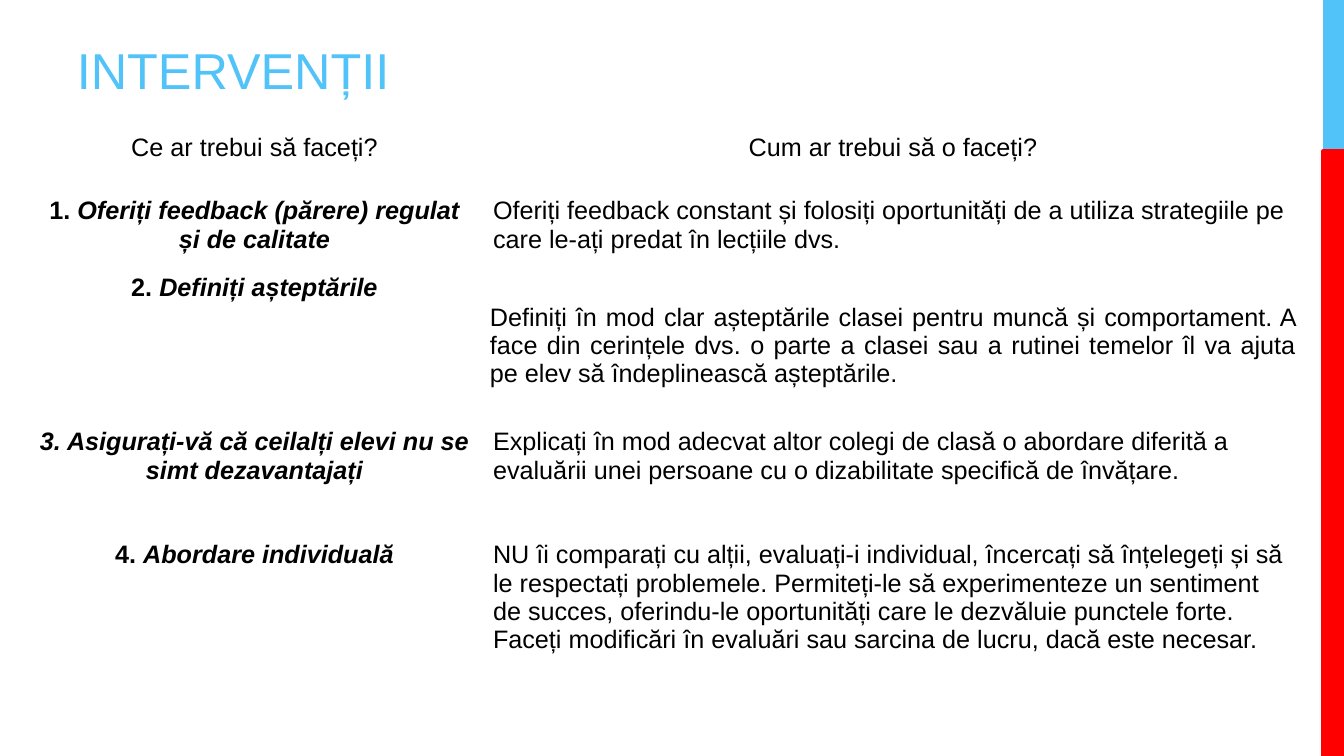
from dataclasses import dataclass

from pptx import Presentation
from pptx.dml.color import RGBColor
from pptx.enum.shapes import MSO_SHAPE as Shape
from pptx.enum.text import MSO_ANCHOR as Anchor, PP_ALIGN as Align
from pptx.util import Pt

PX = 914400 / 100.8

TITLE = "INTERVENȚII"
HEADINGS = ("Ce ar trebui să faceți?", "Cum ar trebui să o faceți?")
# (number, is the number italic, action, how to do it)
INTERVENTIONS = [
    ("1. ", False, "Oferiți feedback (părere) regulat și de calitate",
     "Oferiți feedback constant și folosiți oportunități de a utiliza "
     "strategiile pe care le-ați predat în lecțiile dvs."),
    ("2. ", False, "Definiți așteptările",
     "Definiți în mod clar așteptările clasei pentru muncă și comportament. "
     "A face din cerințele dvs. o parte a clasei sau a rutinei temelor îl va "
     "ajuta pe elev să îndeplinească așteptările."),
    ("3. ", True, "Asigurați-vă că ceilalți elevi nu se simt dezavantajați",
     "Explicați în mod adecvat altor colegi de clasă o abordare diferită a "
     "evaluării unei persoane cu o dizabilitate specifică de învățare."),
    ("4. ", False, "Abordare individuală",
     "NU îi comparați cu alții, evaluați-i individual, încercați să "
     "înțelegeți și să le respectați problemele. Permiteți-le să "
     "experimenteze un sentiment de succes, oferindu-le oportunități care le "
     "dezvăluie punctele forte. Faceți modificări în evaluări sau sarcina de "
     "lucru, dacă este necesar."),
]
JUSTIFIED_ROW = 2

SLIDE_SIZE = (1344, 756)
TITLE_BOX = (67, 21, 851, 84)
BAR_LEFT, BAR_WIDTH, BAR_SPLIT = 1323, 21, 151
TABLE_LEFT, TABLE_TOP = 26, 129
COLUMNS = (457, 820)
ROWS = (63, 77, 154, 113, 190)


@dataclass(frozen=True)
class Theme:
    font: str = "Arial"
    title_size: int = 36
    body_size: int = 18
    sky: RGBColor = RGBColor(0x51, 0xC3, 0xF9)
    red: RGBColor = RGBColor(0xFF, 0, 0)
    black: RGBColor = RGBColor(0, 0, 0)


THEME = Theme()


def px(*lengths):
    return [round(length * PX) for length in lengths]


def style(paragraph, size, color, align=Align.LEFT):
    paragraph.alignment = align
    paragraph.font.name = THEME.font
    paragraph.font.size = Pt(size)
    paragraph.font.color.rgb = color


def add_bar(slide, top, height, color, outlined=False):
    bar = slide.shapes.add_shape(
        Shape.RECTANGLE, *px(BAR_LEFT, top, BAR_WIDTH, height))
    bar.shadow.inherit = False
    bar.fill.solid()
    bar.fill.fore_color.rgb = color
    if outlined:
        bar.line.color.rgb = color
        bar.line.width = Pt(2.25)
    else:
        bar.line.fill.background()


def add_title(slide):
    frame = slide.shapes.add_textbox(*px(*TITLE_BOX)).text_frame
    frame.word_wrap = True
    frame.vertical_anchor = Anchor.BOTTOM
    frame.text = TITLE
    style(frame.paragraphs[0], THEME.title_size, THEME.sky)


def fill_cell(cell, text, align):
    cell.fill.background()
    paragraph = cell.text_frame.paragraphs[0]
    style(paragraph, THEME.body_size, THEME.black, align)
    paragraph.add_run().text = text
    return paragraph


def add_interventions(slide):
    table = slide.shapes.add_table(
        len(ROWS), len(COLUMNS),
        *px(TABLE_LEFT, TABLE_TOP, sum(COLUMNS), sum(ROWS))).table
    table.first_row = table.horz_banding = False
    for column, width in zip(table.columns, px(*COLUMNS)):
        column.width = width
    for row, height in zip(table.rows, px(*ROWS)):
        row.height = height

    for column, heading in enumerate(HEADINGS):
        fill_cell(table.cell(0, column), heading, Align.CENTER)
    for row, (number, italic, action, method) in enumerate(INTERVENTIONS, 1):
        label = fill_cell(table.cell(row, 0), number, Align.CENTER)
        label.font.bold = True
        label.runs[0].font.italic = italic
        action_run = label.add_run()
        action_run.text = action
        action_run.font.italic = True
        justified = row == JUSTIFIED_ROW
        fill_cell(table.cell(row, 1), method,
                  Align.JUSTIFY if justified else Align.LEFT)

    middle = table.cell(JUSTIFIED_ROW, 1)
    middle.vertical_anchor = Anchor.MIDDLE
    middle.margin_left, middle.margin_right = px(7, 7)
    middle.margin_top = middle.margin_bottom = 0


def main():
    deck = Presentation()
    deck.slide_width, deck.slide_height = px(*SLIDE_SIZE)
    slide = deck.slides.add_slide(deck.slide_layouts[6])
    add_bar(slide, 0, BAR_SPLIT, THEME.sky)
    add_bar(slide, BAR_SPLIT, SLIDE_SIZE[1] - BAR_SPLIT, THEME.red, True)
    add_title(slide)
    add_interventions(slide)
    deck.save("out.pptx")


if __name__ == "__main__":
    main()
